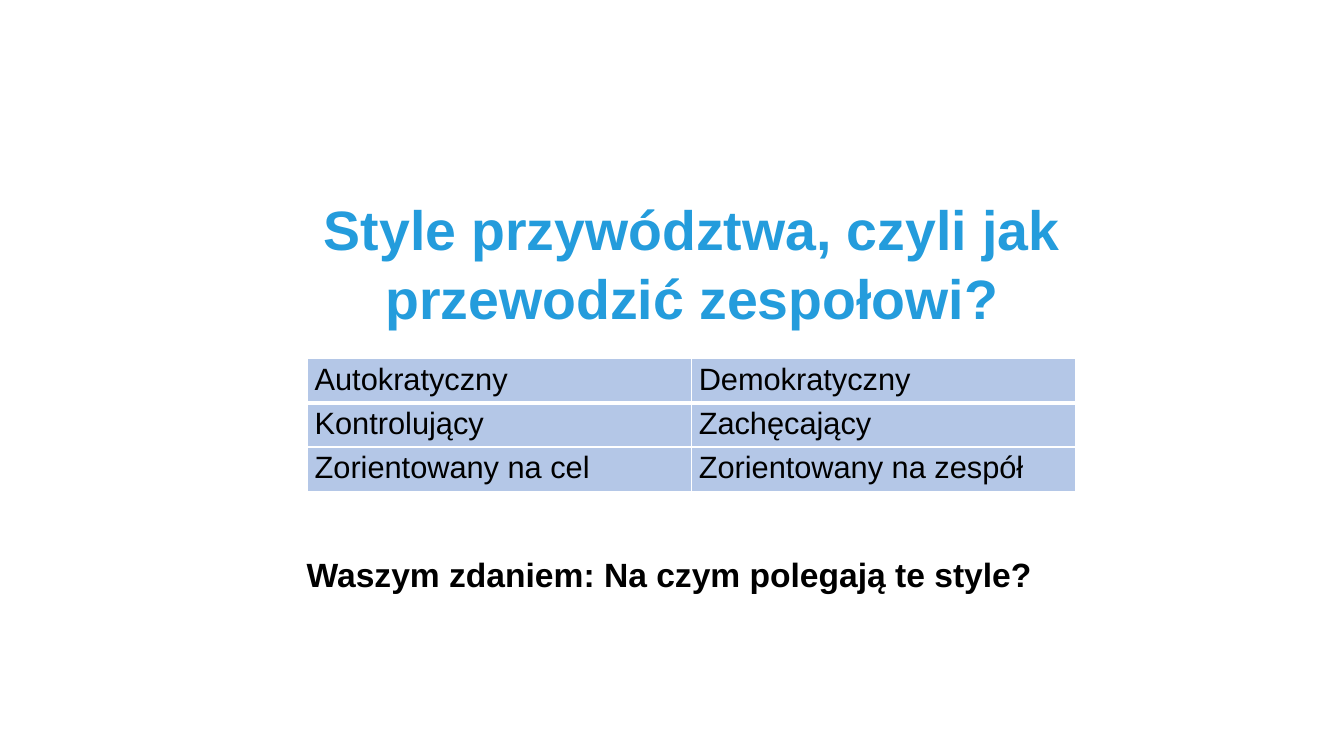
import pptx
import pptx.util
import pptx.dml.color
import pptx.enum.text
import pptx.oxml
import pptx.oxml.ns
from dataclasses import dataclass

Cm = pptx.util.Cm
Pt = pptx.util.Pt
Align = pptx.enum.text.PP_ALIGN
Anchor = pptx.enum.text.MSO_ANCHOR


@dataclass
class Theme:
    font: str = "Arial"
    title: str = "249CDC"
    text: str = "000000"
    cell: str = "B4C7E7"
    rule: str = "FFFFFF"
    title_size: float = 39.6
    ask_size: float = 24
    cell_size: float = 22


class Page:
    def __init__(self, theme, slide):
        self.theme = theme
        self.slide = slide

    def style(self, para, size, color, bold=False):
        font = para.font
        font.name = self.theme.font
        font.size = Pt(size)
        font.bold = bold
        font.color.rgb = pptx.dml.color.RGBColor.from_string(color)

    def text(self, words, box, size, color, space=1.0):
        """Add a bold, centred text box; box is left, top, width, height in cm."""
        frame = self.slide.shapes.add_textbox(*map(Cm, box)).text_frame
        frame.word_wrap = True
        frame.vertical_anchor = Anchor.MIDDLE
        frame.margin_top = frame.margin_bottom = 0
        para = frame.paragraphs[0]
        para.text = words
        para.alignment = Align.CENTER
        para.line_spacing = space
        self.style(para, size, color, bold=True)

    def edge(self, cell, side, width):
        """Draw one cell border; side is L, R, T or B and width is in points."""
        line = pptx.oxml.parse_xml(
            f'<a:ln{side} {pptx.oxml.ns.nsdecls("a")} w="{Pt(width)}">'
            f'<a:solidFill><a:srgbClr val="{self.theme.rule}"/></a:solidFill>'
            f'</a:ln{side}>')
        cell._tc.get_or_add_tcPr().append(line)

    def table(self, rows, left, top, col, row):
        """Add a table of equal columns and rows, with a thick rule below the first."""
        count, wide = len(rows), len(rows[0])
        grid = self.slide.shapes.add_table(
            count, wide, Cm(left), Cm(top), Cm(col * wide), Cm(row * count)).table
        for i, words in enumerate(rows):
            grid.rows[i].height = Cm(row)
            for j, word in enumerate(words):
                cell = grid.cell(i, j)
                cell.margin_left = cell.margin_right = Cm(0.18)
                cell.margin_top = cell.margin_bottom = Cm(0.09)
                for side in "LRTB":
                    thick = (i, side) in ((0, "B"), (1, "T"))
                    self.edge(cell, side, 3 if thick else 1)
                cell.fill.solid()
                cell.fill.fore_color.rgb = pptx.dml.color.RGBColor.from_string(
                    self.theme.cell)
                para = cell.text_frame.paragraphs[0]
                para.text = word
                self.style(para, self.theme.cell_size, self.theme.text)


def main():
    deck = pptx.Presentation()
    deck.slide_width, deck.slide_height = Cm(33.87), Cm(19.05)
    theme = Theme()
    page = Page(theme, deck.slides.add_slide(deck.slide_layouts[6]))

    page.text("Style przywództwa, czyli jak przewodzić zespołowi?",
              (7.04, 4.9, 20.8, 3.4), theme.title_size, theme.title, space=1.04)
    page.table([["Autokratyczny", "Demokratyczny"],
                ["Kontrolujący", "Zachęcający"],
                ["Zorientowany na cel", "Zorientowany na zespół"]],
               left=7.75, top=9.04, col=9.68, row=1.07)
    page.text("Waszym zdaniem: Na czym polegają te style?",
              (5.92, 13.97, 21.89, 0.97), theme.ask_size, theme.text)

    deck.save("out.pptx")


if __name__ == "__main__":
    main()
